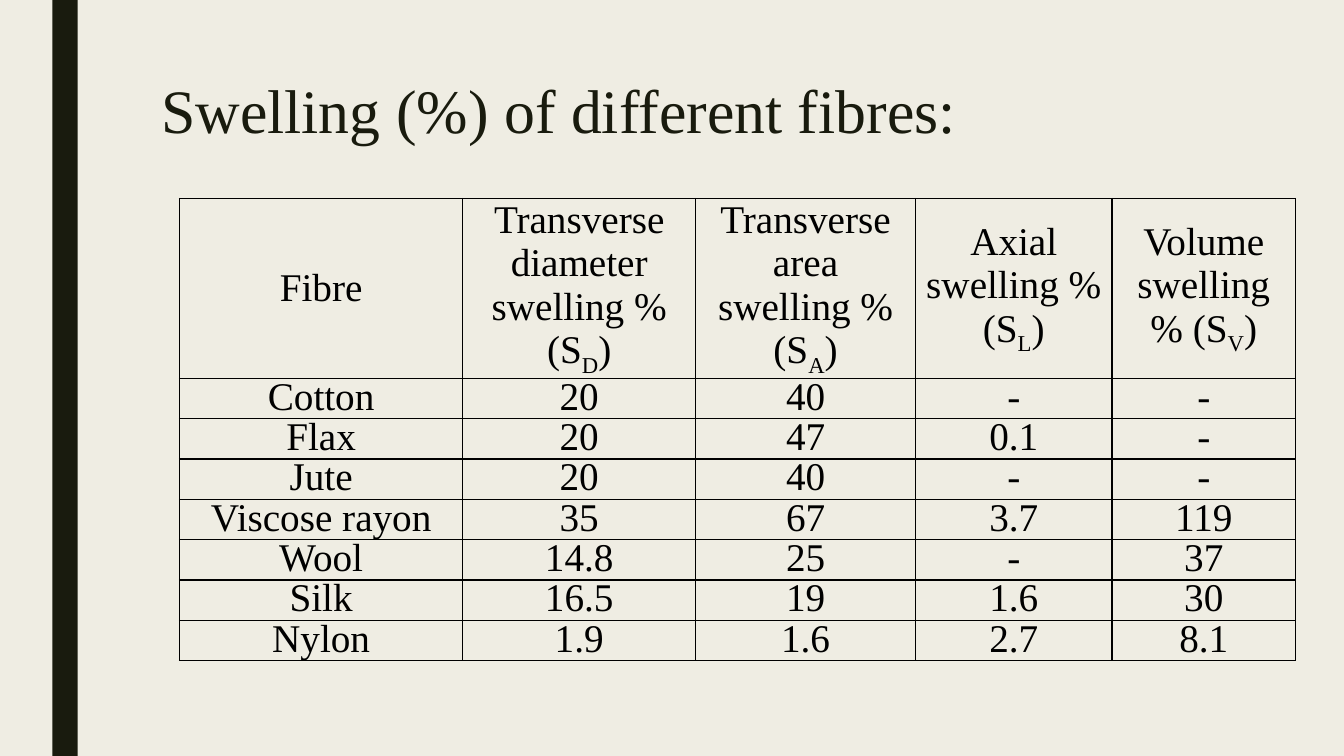
"""Build the slide with a table of fibre swelling percentages."""

import dataclasses

import lxml.etree
import pptx
import pptx.dml.color
import pptx.enum.shapes
import pptx.enum.text
import pptx.oxml.ns
import pptx.util

COLOURS = {"paper": "EFEDE3", "dark": "191B0E", "ink": "000000"}
FONT = "Times New Roman"
WIDTH = pptx.util.Inches(13.33)
HEIGHT = pptx.util.Inches(7.5)
COLUMN = WIDTH / 1333
ROW = HEIGHT / 750


@dataclasses.dataclass(frozen=True)
class Area:
    left: int
    top: int
    width: int
    height: int

    def lengths(self) -> tuple[int, int, int, int]:
        return (round(self.left * COLUMN), round(self.top * ROW),
                round(self.width * COLUMN), round(self.height * ROW))


@dataclasses.dataclass(frozen=True)
class Heading:
    lines: tuple[str, ...]
    symbol: str
    columns: int


BAR = Area(52, 0, 25, 750)
TITLE = Area(150, 75, 1050, 162)
HEADER_ROWS = 178
BODY_ROWS = 40
HEADINGS = (
    Heading(("Fibre",), "", 281),
    Heading(("Transverse diameter", "swelling % (S"), "D", 231),
    Heading(("Transverse area swelling % (S",), "A", 218),
    Heading(("Axial swelling % (S",), "L", 195),
    Heading(("Volume swelling % (S",), "V", 182),
)
FIBRES = (
    ("Cotton", "20", "40", "-", "-"),
    ("Flax", "20", "47", "0.1", "-"),
    ("Jute", "20", "40", "-", "-"),
    ("Viscose rayon", "35", "67", "3.7", "119"),
    ("Wool", "14.8", "25", "-", "37"),
    ("Silk", "16.5", "19", "1.6", "30"),
    ("Nylon", "1.9", "1.6", "2.7", "8.1"),
)
TABLE = Area(178, 197, sum(heading.columns for heading in HEADINGS),
             HEADER_ROWS + BODY_ROWS * len(FIBRES))


def colour(name: str) -> pptx.dml.color.RGBColor:
    return pptx.dml.color.RGBColor.from_string(COLOURS[name])


def write(para, text: str, *, size: float = 28, ink: str = "ink",
          align=pptx.enum.text.PP_ALIGN.CENTER, spacing: float = 1,
          subscript: bool = False) -> None:
    para.alignment = align
    para.line_spacing = spacing
    span = para.add_run()
    span.text = text
    span.font.name = FONT
    span.font.size = pptx.util.Pt(size)
    span.font.bold = False
    span.font.color.rgb = colour(ink)
    if subscript:
        span._r.get_or_add_rPr().set("baseline", "-25000")


def format_cell(cell) -> None:
    cell.vertical_anchor = pptx.enum.text.MSO_ANCHOR.MIDDLE
    cell.margin_left = cell.margin_right = pptx.util.Inches(0.07)
    cell.margin_top = cell.margin_bottom = 0
    cell.fill.background()
    properties = cell._tc.get_or_add_tcPr()
    for position, side in enumerate(("lnL", "lnR", "lnT", "lnB")):
        border = lxml.etree.Element(pptx.oxml.ns.qn(f"a:{side}"), w=str(pptx.util.Pt(1)))
        fill = lxml.etree.SubElement(border, pptx.oxml.ns.qn("a:solidFill"))
        lxml.etree.SubElement(fill, pptx.oxml.ns.qn("a:srgbClr"), val=COLOURS["ink"])
        properties.insert(position, border)


def draw_bar(page) -> None:
    bar = page.shapes.add_shape(pptx.enum.shapes.MSO_SHAPE.RECTANGLE, *BAR.lengths())
    bar.shadow.inherit = False
    bar.fill.solid()
    bar.fill.fore_color.rgb = colour("dark")
    bar.line.fill.background()


def draw_title(page) -> None:
    title = page.shapes.title
    title.left, title.top, title.width, title.height = TITLE.lengths()
    frame = title.text_frame
    frame.word_wrap = True
    frame.auto_size = pptx.enum.text.MSO_AUTO_SIZE.NONE
    frame.vertical_anchor = pptx.enum.text.MSO_ANCHOR.TOP
    write(frame.paragraphs[0], "Swelling (%) of different fibres:", size=44.1,
          ink="dark", align=pptx.enum.text.PP_ALIGN.LEFT, spacing=0.89)


def draw_table(page) -> None:
    table = page.shapes.add_table(len(FIBRES) + 1, len(HEADINGS), *TABLE.lengths()).table
    table.first_row = False
    table.horz_banding = False
    for row in table.rows:
        row.height = round(BODY_ROWS * ROW)
    table.rows[0].height = round(HEADER_ROWS * ROW)
    for cell in table.iter_cells():
        format_cell(cell)
    for index, heading in enumerate(HEADINGS):
        table.columns[index].width = round(heading.columns * COLUMN)
        frame = table.cell(0, index).text_frame
        para = frame.paragraphs[0]
        write(para, heading.lines[0])
        for line in heading.lines[1:]:
            para = frame.add_paragraph()
            write(para, line)
        if heading.symbol:
            write(para, heading.symbol, subscript=True)
            write(para, ")")
    for number, fibre in enumerate(FIBRES, start=1):
        for index, value in enumerate(fibre):
            write(table.cell(number, index).text_frame.paragraphs[0], value, spacing=0.9)


def main() -> None:
    deck = pptx.Presentation()
    deck.slide_width, deck.slide_height = WIDTH, HEIGHT
    page = deck.slides.add_slide(deck.slide_layouts[5])
    page.background.fill.solid()
    page.background.fill.fore_color.rgb = colour("paper")
    draw_bar(page)
    draw_title(page)
    draw_table(page)
    deck.save("out.pptx")


if __name__ == "__main__":
    main()
